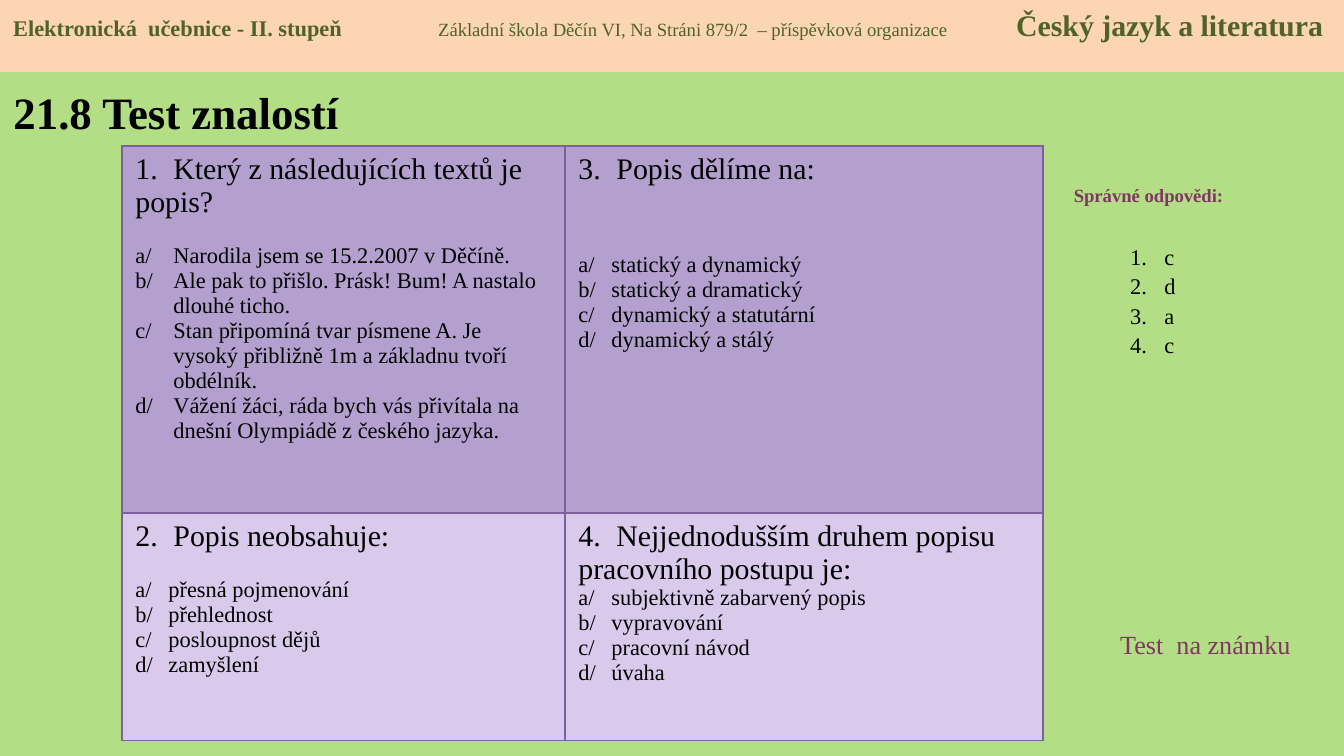
from dataclasses import dataclass
from lxml.etree import SubElement as Sub
from pptx import Presentation
from pptx.dml.color import RGBColor as Rgb
from pptx.enum.shapes import MSO_SHAPE as Shape
from pptx.enum.text import MSO_ANCHOR as Anchor, MSO_AUTO_SIZE as Auto, PP_ALIGN as Align
from pptx.oxml.ns import qn
from pptx.util import Pt

SCALE = 914400 / 134.4


@dataclass(frozen=True)
class Theme:
    face: str = "Times New Roman"
    page: str = "B3DE85"
    band: str = "FCD5B5"
    olive: str = "4F6228"
    plum: str = "813763"
    ink: str = "000000"
    edge: str = "7D60A0"
    rows: tuple = ("B3A0CE", "D9CAEC")
    title: int = 24
    head: int = 16
    mid: int = 14
    body: int = 12
    small: int = 10


THEME = Theme()
HEAD_TAB = 38
TESTS = [
    [
        ("1.\tKterý z následujících textů je popis?", 25, 38, [
            "Narodila jsem se 15.2.2007 v Děčíně.",
            "Ale pak to přišlo. Prásk! Bum! A nastalo dlouhé ticho.",
            "Stan připomíná tvar písmene A. Je vysoký přibližně 1m a základnu tvoří obdélník.",
            "Vážení žáci, ráda bych vás přivítala na dnešní Olympiádě z českého jazyka.",
        ]),
        ("3.\tPopis dělíme na:", 67, 33, [
            "statický a dynamický", "statický a dramatický",
            "dynamický a statutární", "dynamický a stálý",
        ]),
    ],
    [
        ("2.\tPopis neobsahuje:", 25, 33, [
            "přesná pojmenování", "přehlednost", "posloupnost dějů", "zamyšlení",
        ]),
        ("4.\tNejjednodušším druhem popisu pracovního postupu je:", 0, 33, [
            "subjektivně zabarvený popis", "vypravování", "pracovní návod", "úvaha",
        ]),
    ],
]


def px(num):
    return round(num * SCALE)


def place(item, left, top, width, height):
    item.left, item.top, item.width, item.height = map(px, (left, top, width, height))


def paint(fill, color):
    fill.solid()
    fill.fore_color.rgb = Rgb.from_string(color)


def write(para, text, size, color=THEME.ink, bold=False):
    run = para.add_run()
    run.text = text
    font = run.font
    font.name, font.size, font.bold = THEME.face, Pt(size), bold
    font.color.rgb = Rgb.from_string(color)


def set_tabs(para, *stops):
    tabs = Sub(para._p.get_or_add_pPr(), qn("a:tabLst"))
    for stop in stops:
        Sub(tabs, qn("a:tab"), pos=str(px(stop)), algn="l")


def hang(para, width):
    props = para._p.get_or_add_pPr()
    props.set("marL", str(px(width)))
    props.set("indent", str(-px(width)))
    return props


def add_box(slide, *rect):
    box = slide.shapes.add_textbox(*map(px, rect))
    box.text_frame.word_wrap = True
    return box.text_frame


def add_note(slide, rect, text, size, bold=False, align=Align.LEFT):
    para = add_box(slide, *rect).paragraphs[0]
    para.alignment = align
    write(para, text, size, THEME.plum, bold)


def add_title(slide):
    title = slide.shapes.title
    place(title, 0, 78, 476, 67)
    frame = title.text_frame
    frame.auto_size = Auto.NONE
    frame.vertical_anchor = Anchor.MIDDLE
    para = frame.paragraphs[0]
    para.alignment = Align.LEFT
    write(para, "21.8 Test znalostí", THEME.title, bold=True)


def add_band(slide):
    band = slide.shapes.add_shape(Shape.RECTANGLE, 0, 0, px(1344), px(72))
    band.shadow.inherit = False
    paint(band.fill, THEME.band)
    band.line.fill.background()
    frame = band.text_frame
    frame.word_wrap = True
    frame.vertical_anchor = Anchor.TOP
    para = frame.paragraphs[0]
    set_tabs(para, 425, 1003)
    para.alignment = Align.LEFT
    write(para, "Elektronická  učebnice - II. stupeň", THEME.body, THEME.olive, True)
    write(para, "\tZákladní škola Děčín VI, Na Stráni 879/2  – příspěvková organizace",
          THEME.small, THEME.olive)
    write(para, "\tČeský jazyk a literatura", THEME.head, THEME.olive, True)


def add_edges(cell):
    props = cell._tc.get_or_add_tcPr()
    for spot, side in enumerate(("lnL", "lnR", "lnT", "lnB")):
        line = Sub(props, qn("a:" + side), w=str(Pt(0.75)))
        fill = Sub(line, qn("a:solidFill"))
        Sub(fill, qn("a:srgbClr"), val=THEME.edge)
        props.insert(spot, line)


def fill_cell(cell, test, color):
    head, gap, inset, items = test
    paint(cell.fill, color)
    add_edges(cell)
    frame = cell.text_frame
    para = frame.paragraphs[0]
    set_tabs(para, HEAD_TAB)
    write(para, head, THEME.head)
    for num, (mark, item) in enumerate(zip("abcd", items)):
        para = frame.add_paragraph()
        hang(para, inset)
        if num == 0 and gap:
            para.space_before = px(gap)
        write(para, f"{mark}/\t{item}", THEME.body)


def add_tests(slide):
    table = slide.shapes.add_table(2, 2, *map(px, (122, 146, 921, 595))).table
    for col, width in zip(table.columns, (443, 478)):
        col.width = px(width)
    for row, height, tests, color in zip(table.rows, (367, 228), TESTS, THEME.rows):
        row.height = px(height)
        for cell, test in zip(row.cells, tests):
            fill_cell(cell, test, color)


def add_key(slide):
    frame = add_box(slide, 1117, 208, 74, 176)
    frame.margin_top = px(33)
    for num, mark in enumerate("cdac"):
        para = frame.add_paragraph() if num else frame.paragraphs[0]
        props = hang(para, 34)
        Sub(props, qn("a:buFont"), typeface=THEME.face)
        Sub(props, qn("a:buAutoNum"), type="arabicPeriod")
        para.line_spacing = 1.09
        write(para, mark, THEME.body)


def main():
    deck = Presentation()
    deck.slide_width, deck.slide_height = px(1344), px(756)
    slide = deck.slides.add_slide(deck.slide_layouts[5])
    paint(slide.background.fill, THEME.page)
    add_title(slide)
    add_note(slide, (1043, 177, 211, 36), "Správné odpovědi:", THEME.small, True, Align.CENTER)
    add_tests(slide)
    add_key(slide)
    add_note(slide, (1107, 622, 211, 46), "Test  na známku", THEME.mid)
    add_band(slide)
    deck.save("out.pptx")


if __name__ == "__main__":
    main()
